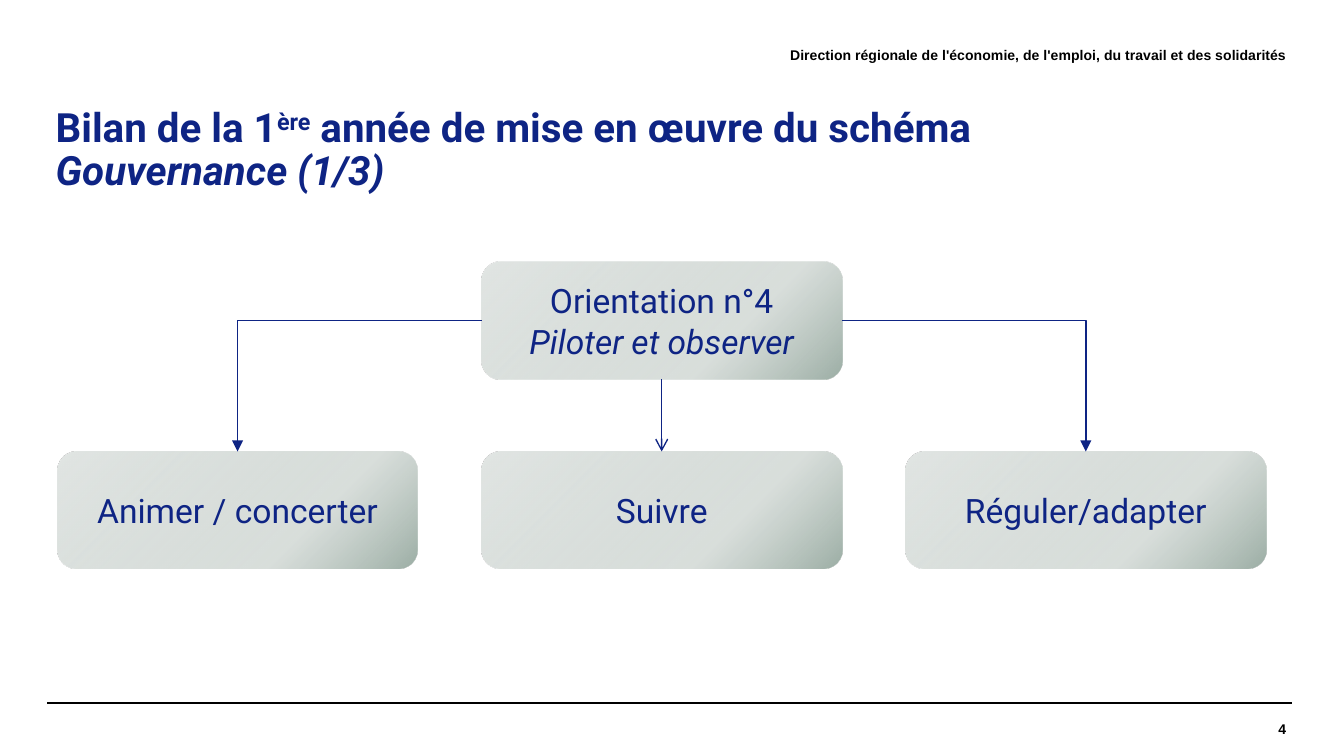
"""Build the governance slide: one orientation leading to three actions."""
import pptx
import pptx.dml.color
import pptx.enum.shapes
import pptx.enum.text
import pptx.oxml
import pptx.oxml.ns
import pptx.util
from lxml import etree

Pt = pptx.util.Pt
qn = pptx.oxml.ns.qn
ALIGN = pptx.enum.text.PP_ALIGN
MIDDLE = pptx.enum.text.MSO_ANCHOR.MIDDLE
SHAPE = pptx.enum.shapes.MSO_SHAPE
CONNECTOR = pptx.enum.shapes.MSO_CONNECTOR
NAVY = pptx.dml.color.RGBColor(0x0E, 0x24, 0x84)
BLACK = pptx.dml.color.RGBColor(0, 0, 0)

TITLE = [
    [("Bilan de la 1", {}), ("ère", {"super": True}),
     (" année de mise en œuvre du schéma", {})],
    [("Gouvernance (1/3)", {"italic": True})],
]
ORIENTATION = [[("Orientation n°4", {})], [("Piloter et observer", {"italic": True})]]
ACTIONS = ["Animer / concerter", "Suivre", "Réguler/adapter"]
MARGINALIA = [
    ("Direction régionale de l'économie, de l'emploi, du travail et des solidarités",
     (226, 15.2, 463, 28)),
    ("4", (582.5, 376.6, 106.5, 28)),
]
RULE_STARTS = [25.2, 28.2]
RULE_WIDTH, RULE_Y = 663.8, 376.6
GRADIENT = [(0, "9CAEA5", 100), (32, "C4CDC8", 64), (100, "E2E6E4", 100)]

TITLE_FORMAT = {"name": "Roboto", "size": Pt(21.6), "bold": True}
BOX_FORMAT = {"name": "Roboto", "size": Pt(18), "bold": False}
SMALL_FORMAT = {"name": "Arial", "size": Pt(7.5), "bold": True}

BOX_W, BOX_H = 193, 62.8
LEFT, PITCH = 30.8, 227.2
PARENT_TOP, ACTION_TOP = 140.3, 241.9


def add_run(p, text, fmt, color):
    r = p.add_run()
    r.text = text
    r.font.color.rgb = color
    for key, value in fmt.items():
        if key == "super":
            r.font._element.set("baseline", "30000")
        else:
            setattr(r.font, key, value)


def write(tf, lines, fmt, color, align, breaks=False):
    tf.word_wrap = True
    tf.vertical_anchor = MIDDLE
    p = tf.paragraphs[0]
    for i, line in enumerate(lines):
        if i and breaks:
            p.add_line_break()
        elif i:
            p = tf.add_paragraph()
        p.alignment = align
        for text, extra in line:
            add_run(p, text, {**fmt, **extra}, color)


def add_box(s, column, top, lines):
    sp = s.shapes.add_shape(SHAPE.ROUNDED_RECTANGLE, Pt(LEFT + column * PITCH), Pt(top),
                            Pt(BOX_W), Pt(BOX_H))
    sp.shadow.inherit = False
    sp.line.fill.background()
    sp.fill.gradient()
    grad = sp._element.spPr.find(qn("a:gradFill"))
    stops = grad.find(qn("a:gsLst"))
    for stop in list(stops):
        stops.remove(stop)
    for pos, color, alpha in GRADIENT:
        gs = etree.SubElement(stops, qn("a:gs"), pos=str(pos * 1000))
        clr = etree.SubElement(gs, qn("a:srgbClr"), val=color)
        if alpha < 100:
            etree.SubElement(clr, qn("a:alpha"), val=str(alpha * 1000))
    lin = grad.find(qn("a:lin"))
    lin.set("ang", str(225 * 60000))
    lin.set("scaled", "0")
    write(sp.text_frame, lines, BOX_FORMAT, NAVY, ALIGN.CENTER)
    return sp


def add_line(s, kind, ends, color, width, arrow=None):
    c = s.shapes.add_connector(kind, *[Pt(v) for v in ends])
    c.line.color.rgb = color
    c.line.width = Pt(width)
    if arrow:
        etree.SubElement(c.line._get_or_add_ln(), qn("a:tailEnd"), type=arrow)
    etree.SubElement(c._element.spPr, qn("a:effectLst"))
    return c


def link(s, parent, site, child, kind, arrow):
    c = add_line(s, kind, (0, 0, 0, 0), NAVY, 0.75, arrow)
    c.begin_connect(parent, site)
    c.end_connect(child, 0)
    if kind == CONNECTOR.ELBOW:
        c._element.spPr.find(qn("a:prstGeom")).set("prst", "bentConnector2")


def main():
    prs = pptx.Presentation()
    prs.slide_width, prs.slide_height = Pt(720), Pt(405)
    s = prs.slides.add_slide(prs.slide_layouts[5])

    for x in RULE_STARTS:
        add_line(s, CONNECTOR.STRAIGHT, (x, RULE_Y, x + RULE_WIDTH, RULE_Y), BLACK, 0.8)
    for text, frame in MARGINALIA:
        tf = s.shapes.add_textbox(*[Pt(v) for v in frame]).text_frame
        for side in ("left", "top", "right", "bottom"):
            setattr(tf, "margin_" + side, 0)
        write(tf, [[(text, {})]], SMALL_FORMAT, BLACK, ALIGN.RIGHT)

    title = s.shapes.title
    title.left, title.top, title.width, title.height = Pt(22.6), Pt(54.5), Pt(663), Pt(52.6)
    title.text_frame.auto_size = pptx.enum.text.MSO_AUTO_SIZE.NONE
    write(title.text_frame, TITLE, TITLE_FORMAT, NAVY, ALIGN.LEFT, breaks=True)
    title.text_frame.paragraphs[0].line_spacing = 0.9

    parent = add_box(s, 1, PARENT_TOP, ORIENTATION)
    actions = [add_box(s, i, ACTION_TOP, [[(text, {})]]) for i, text in enumerate(ACTIONS)]
    routes = [(1, CONNECTOR.ELBOW, "triangle"), (2, CONNECTOR.STRAIGHT, "arrow"),
              (3, CONNECTOR.ELBOW, "triangle")]
    for child, (site, kind, arrow) in zip(actions, routes):
        link(s, parent, site, child, kind, arrow)

    prs.save("out.pptx")


if __name__ == "__main__":
    main()
